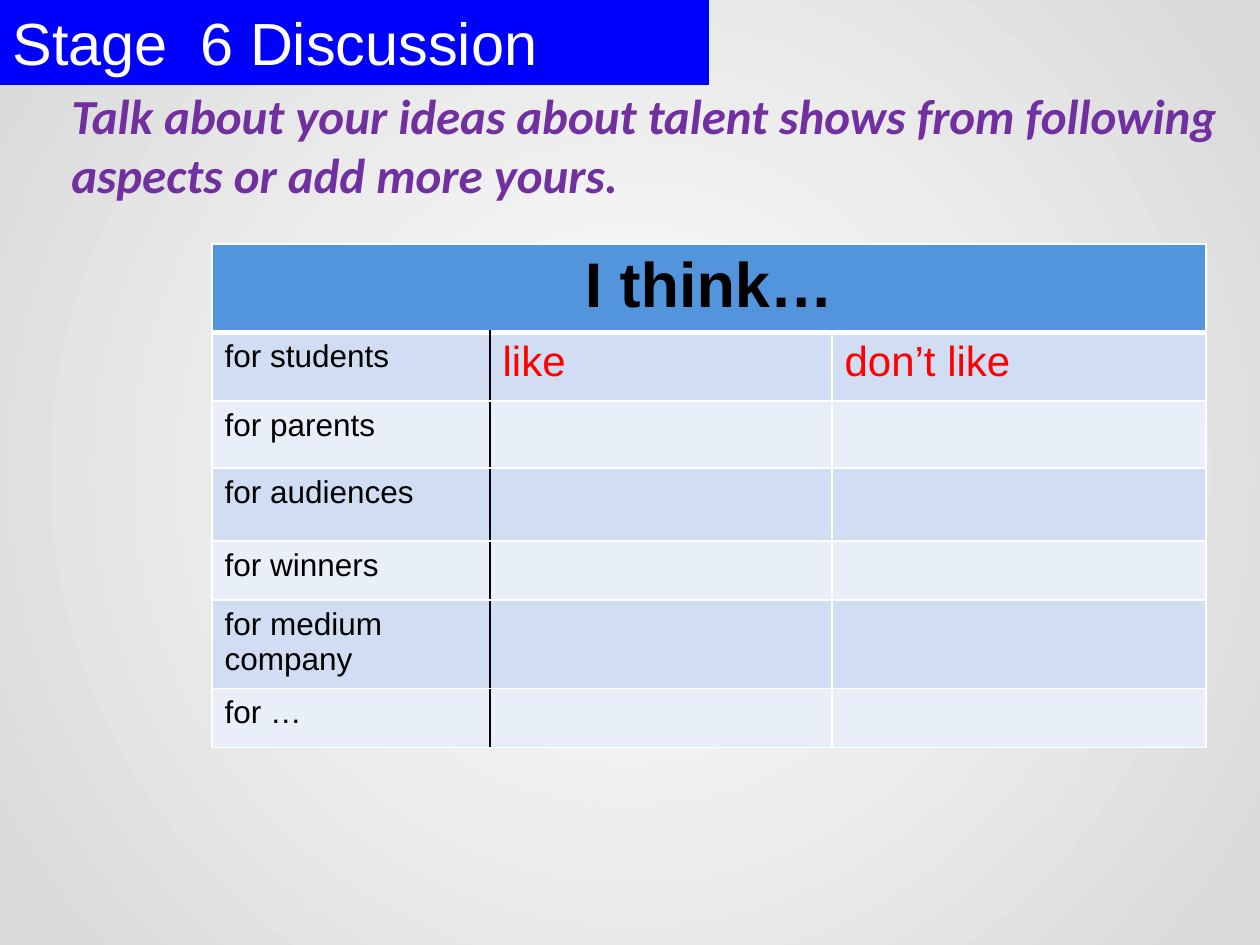
from lxml.etree import SubElement
from pptx import Presentation
from pptx.dml.color import RGBColor
from pptx.enum.shapes import MSO_SHAPE
from pptx.enum.text import MSO_ANCHOR, PP_ALIGN
from pptx.oxml import parse_xml
from pptx.oxml.ns import nsdecls, qn
from pptx.util import Emu, Pt

WHITE = RGBColor(0xFF, 0xFF, 0xFF)
BLACK = RGBColor(0x00, 0x00, 0x00)
GREY = RGBColor(0xD9, 0xD9, 0xD9)
BLUE = RGBColor(0x00, 0x00, 0xFF)
PURPLE = RGBColor(0x70, 0x30, 0xA0)
RED = RGBColor(0xFF, 0x00, 0x00)
HEADER_BLUE = RGBColor(0x52, 0x95, 0xDC)
BAND_DARK = RGBColor(0xD1, 0xDD, 0xF2)
BAND_LIGHT = RGBColor(0xE9, 0xEF, 0xF9)

COLUMN_WIDTHS = (278, 342, 374)
ROW_HEIGHTS = (88, 69, 67, 73, 59, 88, 59)
OPINIONS = (
    ("I think…", "", ""),
    ("for students", "like", "don’t like"),
    ("for parents", "", ""),
    ("for audiences", "", ""),
    ("for winners", "", ""),
    ("for medium company", "", ""),
    ("for …", "", ""),
)


def px(length):
    """Turn pixels at 126 to the inch into EMU."""
    return Emu(round(length * 914400 / 126))


def write(frame, text, size, color, name="Arial", bold=False, italic=False):
    """Put one styled paragraph into a text frame and return it."""
    paragraph = frame.paragraphs[0]
    paragraph.text = text
    font = paragraph.font
    font.size, font.name, font.bold, font.italic = Pt(size), name, bold, italic
    font.color.rgb = color
    return paragraph


def paint_background(slide):
    """Fill the background with a circular gradient from its centre."""
    fill = slide.background.fill
    fill.gradient()
    for stop, position, color in zip(fill.gradient_stops, (0, 1), (WHITE, GREY)):
        stop.position = position
        stop.color.rgb = color
    linear = slide.element.xpath(".//p:bg//a:lin")[0]
    circle = parse_xml(
        f'<a:path {nsdecls("a")} path="circle">'
        '<a:fillToRect l="50000" t="50000" r="50000" b="50000"/></a:path>'
    )
    linear.getparent().replace(linear, circle)


def add_stage_banner(slide, left, top, width, height):
    """Add the blue banner naming the stage."""
    banner = slide.shapes.add_shape(
        MSO_SHAPE.RECTANGLE, px(left), px(top), px(width), px(height))
    banner.shadow.inherit = False
    banner.fill.solid()
    banner.fill.fore_color.rgb = BLUE
    banner.line.fill.background()
    banner.text_frame.word_wrap = True
    banner.text_frame.vertical_anchor = MSO_ANCHOR.TOP
    title = write(banner.text_frame, "Stage  6 Discussion", 34, WHITE)
    title.alignment = PP_ALIGN.LEFT


def add_task(slide, left, top, width, height):
    """Add the discussion task."""
    task = slide.shapes.add_textbox(px(left), px(top), px(width), px(height))
    task.text_frame.word_wrap = True
    write(task.text_frame,
          "Talk about your ideas about talent shows from following "
          "aspects or add more yours.",
          28, PURPLE, "Calibri", bold=True, italic=True)


def set_borders(cell, row, column):
    """Draw white cell borders, black after the first column."""
    properties = cell._tc.get_or_add_tcPr()
    colors = {"L": BLACK if row and column == 1 else WHITE,
              "R": BLACK if row and column == 0 else WHITE,
              "T": WHITE, "B": WHITE}
    for side, color in colors.items():
        thickness = 3 if row == 0 and side == "B" else 1
        line = SubElement(properties, qn(f"a:ln{side}"), w=str(Pt(thickness)))
        SubElement(SubElement(line, qn("a:solidFill")),
                   qn("a:srgbClr"), val=str(color))


def add_opinion_table(slide, left, top):
    """Add the table of likes and dislikes for each group."""
    table = slide.shapes.add_table(
        len(ROW_HEIGHTS), len(COLUMN_WIDTHS), px(left), px(top),
        px(sum(COLUMN_WIDTHS)), px(sum(ROW_HEIGHTS))).table
    for column, width in zip(table.columns, COLUMN_WIDTHS):
        column.width = px(width)
    for row, height in zip(table.rows, ROW_HEIGHTS):
        row.height = px(height)
    for row, texts in enumerate(OPINIONS):
        band = BAND_DARK if row % 2 else BAND_LIGHT
        for column, text in enumerate(texts):
            cell = table.cell(row, column)
            set_borders(cell, row, column)
            cell.fill.solid()
            cell.fill.fore_color.rgb = band if row else HEADER_BLUE
            if text:
                size = 36 if row == 0 else 24 if column else 18
                write(cell.text_frame, text, size, RED if column else BLACK,
                      bold=row == 0)
    heading = table.cell(0, 0)
    heading.merge(table.cell(0, len(COLUMN_WIDTHS) - 1))
    heading.text_frame.paragraphs[0].alignment = PP_ALIGN.CENTER


def main():
    """Build the discussion slide and save it."""
    presentation = Presentation()
    presentation.slide_width, presentation.slide_height = px(1260), px(945)
    slide = presentation.slides.add_slide(presentation.slide_layouts[6])
    paint_background(slide)
    add_stage_banner(slide, 0, 0, 709, 85)
    add_task(slide, 59, 79, 1182, 72)
    add_opinion_table(slide, 212, 244)
    presentation.save("out.pptx")


if __name__ == "__main__":
    main()
